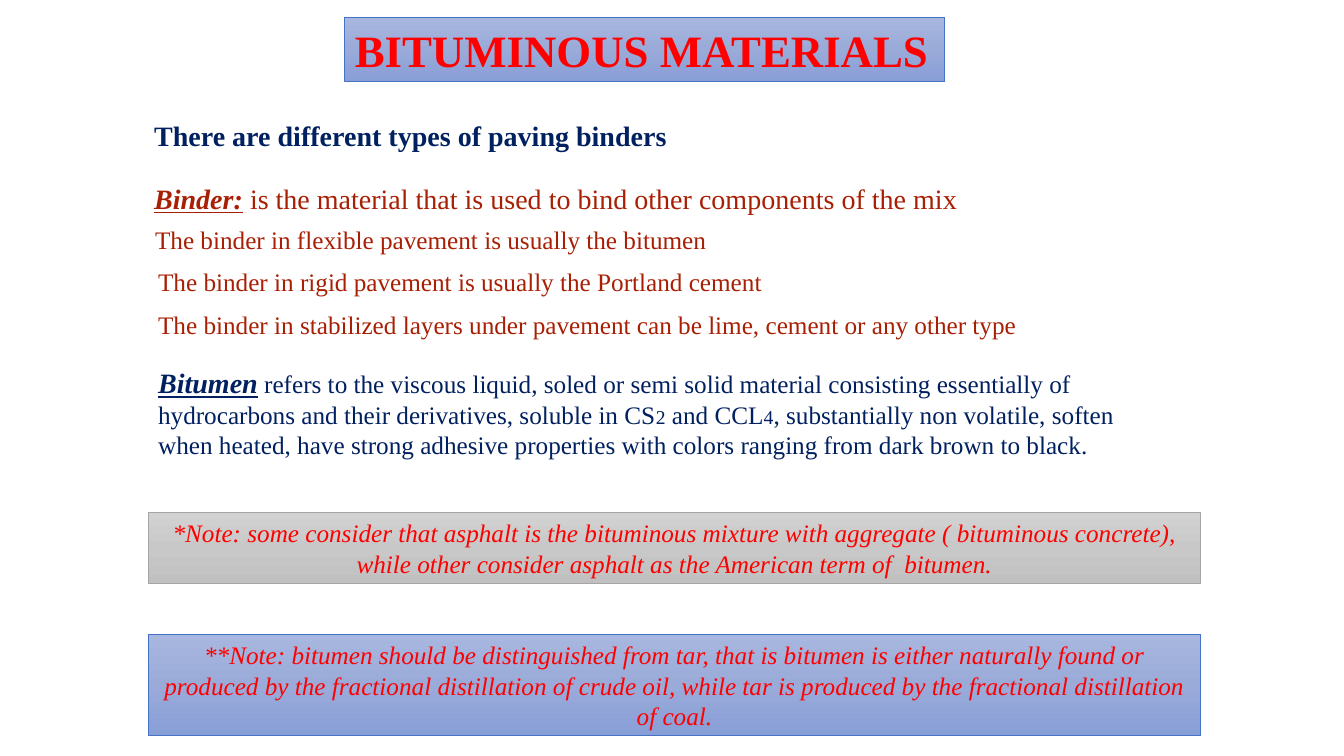
from copy import deepcopy

from pptx import Presentation
from pptx import util as u
from pptx.dml import color
from pptx.enum import shapes, text
from pptx.oxml import ns

RED, NAVY, RUST = "FF0000", "002060", "A81F04"
BLUE_PANEL = (["A8B7DF", "9AABD9", "889ED7"], "4472C4")
GREY_PANEL = (["D2D2D2", "C8C8C8", "C0C0C0"], "A5A5A5")


def rgb(value):
    return color.RGBColor.from_string(value)


class SlideBuilder:
    """Holds the text style and the slide being filled."""

    font_name = "Times New Roman"

    def __init__(self, deck):
        self.page = deck.slides.add_slide(deck.slide_layouts[6])

    def add_spans(self, box, spans, wrap, align):
        frame = box.text_frame
        frame.word_wrap = wrap
        frame.auto_size = text.MSO_AUTO_SIZE.SHAPE_TO_FIT_TEXT
        para = frame.paragraphs[0]
        para.alignment = align
        for words, ink, size, styles in spans:
            span = para.add_run()
            span.text = words
            span.font.color.rgb = rgb(ink)
            formats = {"name": self.font_name, "size": u.Pt(size), **styles}
            for key, value in formats.items():
                setattr(span.font, key, value)

    def label(self, place, spans, wrap=False):
        box = self.page.shapes.add_textbox(*map(u.Inches, place))
        self.add_spans(box, spans, wrap, text.PP_ALIGN.LEFT)

    def panel(self, place, look, spans, wrap=True, align=text.PP_ALIGN.CENTER):
        box = self.page.shapes.add_shape(
            shapes.MSO_SHAPE.RECTANGLE, *map(u.Inches, place))
        box.shadow.inherit = False
        tints, edge = look
        self.shade(box, tints)
        box.line.color.rgb = rgb(edge)
        box.line.width = u.Pt(0.5)
        self.add_spans(box, spans, wrap, align)

    def shade(self, box, tints):
        """Vertical gradient with evenly spaced stops, first tint on top."""
        box.fill.gradient()
        box.fill.gradient_angle = 270
        stop_list = box._element.spPr.find(".//" + ns.qn("a:gsLst"))
        while len(stop_list) < len(tints):
            stop_list.append(deepcopy(stop_list[-1]))
        for index, stop in enumerate(box.fill.gradient_stops):
            stop.position = index / (len(tints) - 1)
            stop.color.rgb = rgb(tints[index])


def main():
    deck = Presentation()
    deck.slide_width, deck.slide_height = u.Inches(13.33), u.Inches(7.5)
    slide = SlideBuilder(deck)
    bold, italic = {"bold": True}, {"italic": True}
    term = {"bold": True, "italic": True, "underline": True}

    # Title
    slide.panel((3.42, 0.17, 5.95, 0.64), BLUE_PANEL,
                [("BITUMINOUS MATERIALS", RED, 32, bold)],
                wrap=False, align=text.PP_ALIGN.LEFT)

    # Binder definition
    slide.label((1.43, 1.13, 5.39, 0.44),
                [("There are different types of paving binders", NAVY, 20, bold)])
    slide.label((1.43, 1.75, 8.32, 0.44), [
        ("Binder:", RUST, 20, term),
        (" ", NAVY, 20, bold),
        ("is the material that is used to bind other components of the mix",
         RUST, 20, {}),
    ])

    # Binder by pavement type
    for left, top, width, words in [
        (1.44, 2.18, 5.73, "The binder in flexible pavement is usually the bitumen"),
        (1.47, 2.59, 6.25, "The binder in rigid pavement is usually the Portland cement"),
        (1.47, 3.02, 8.81, "The binder in stabilized layers under pavement can be "
                           "lime, cement or any other type"),
    ]:
        slide.label((left, top, width, 0.4), [(words, RUST, 18, {})])

    # Bitumen definition
    slide.label((1.47, 3.58, 10.17, 1.04), [
        ("Bitumen", NAVY, 20, term),
        (" refers to the viscous liquid, soled or semi solid material consisting "
         "essentially of hydrocarbons and their derivatives, soluble in CS",
         NAVY, 18, {}),
        ("2", NAVY, 14, {}),
        (" and CCL", NAVY, 18, {}),
        ("4", NAVY, 14, {}),
        (", substantially non volatile, soften when heated, have strong adhesive "
         "properties with colors ranging from dark brown to black.", NAVY, 18, {}),
    ], wrap=True)

    # Notes
    for top, height, look, words in [
        (5.08, 0.71, GREY_PANEL,
         "*Note: some consider that asphalt is the bituminous mixture with aggregate "
         "( bituminous concrete), while other consider asphalt as the American term "
         "of  bitumen."),
        (6.29, 1.01, BLUE_PANEL,
         "**Note: bitumen should be distinguished from tar, that is bitumen is either "
         "naturally found or produced by the fractional distillation of crude oil, "
         "while tar is produced by the fractional distillation of coal."),
    ]:
        slide.panel((1.47, top, 10.44, height), look, [(words, RED, 18, italic)])

    deck.save("out.pptx")


if __name__ == "__main__":
    main()
